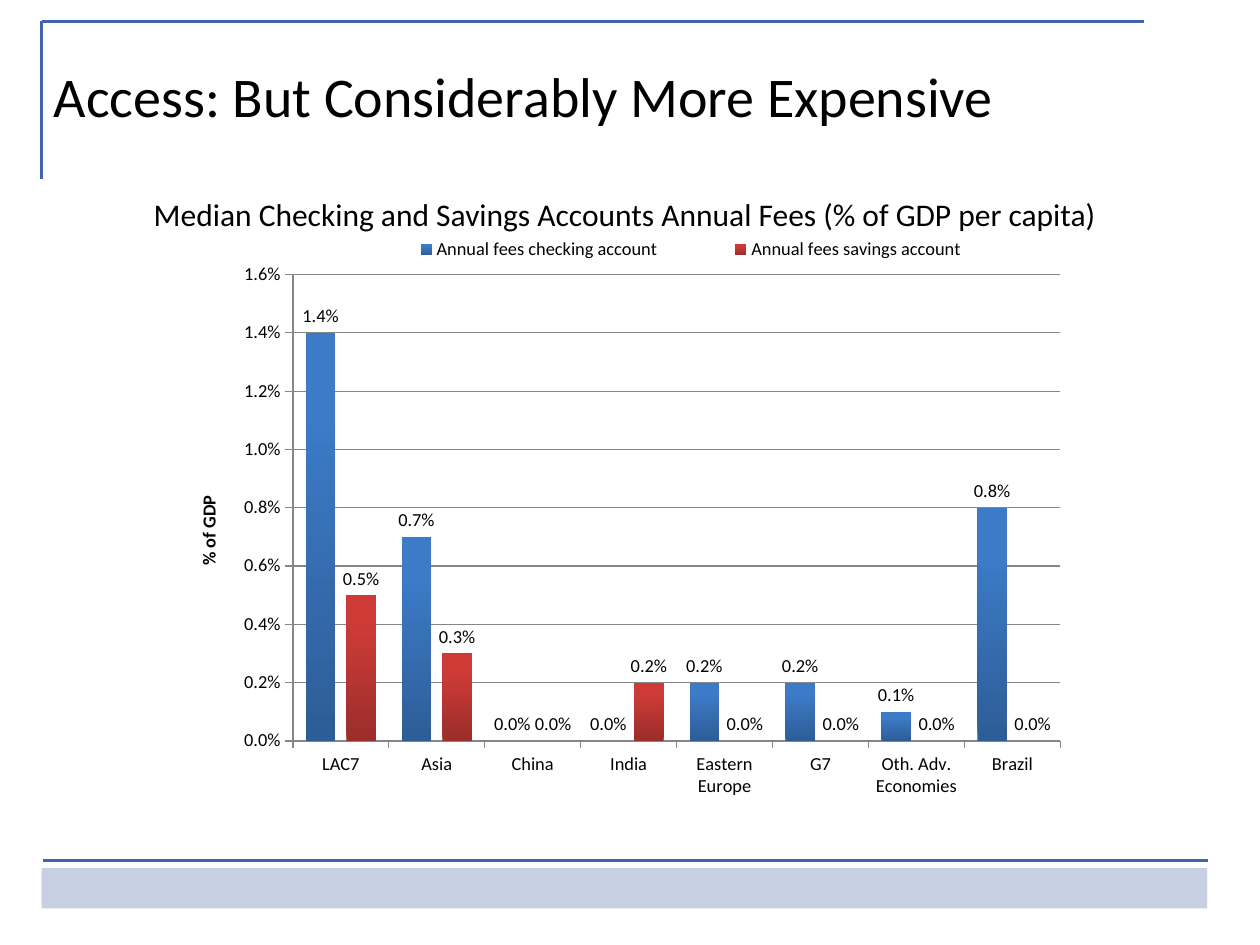
"""Build a slide comparing account fees across regions with a clustered column chart."""
import pptx
import pptx.chart.data
import pptx.dml.color
import pptx.enum.chart
import pptx.enum.shapes
import pptx.enum.text
import pptx.oxml
import pptx.oxml.ns
import pptx.util

Inches, Pt = pptx.util.Inches, pptx.util.Pt
RGBColor = pptx.dml.color.RGBColor
qn = pptx.oxml.ns.qn

RULE_BLUE = RGBColor(0x42, 0x64, 0xB0)
BAND_BLUE = RGBColor(0xC7, 0xD0, 0xE3)
BLACK = RGBColor(0, 0, 0)
GRID_GRAY = RGBColor(0x86, 0x86, 0x86)
FONT = "Calibri"
CHART_SIZE = 10.5

TITLE = "Access: But Considerably More Expensive"
SUBTITLE = "Median Checking and Savings Accounts Annual Fees (% of GDP per capita)"
AXIS_TITLE = "% of GDP"
REGIONS = ["LAC7", "Asia", "China", "India", "Eastern Europe", "G7",
           "Oth. Adv. Economies", "Brazil"]
SERIES = [
    ("Annual fees checking account",
     [0.014, 0.007, 0, 0, 0.002, 0.002, 0.001, 0.008],
     RGBColor(0x2D, 0x5D, 0x97), RGBColor(0x3C, 0x7B, 0xC7)),
    ("Annual fees savings account",
     [0.005, 0.003, 0, 0.002, 0, 0, 0, 0],
     RGBColor(0x9B, 0x2D, 0x2A), RGBColor(0xCE, 0x3B, 0x37)),
]
LEFT = 0.33
RULES = [(9.08, 0.17, LEFT, 0.17), (LEFT, 0.17, LEFT, 1.42), (9.59, 6.83, 0.34, 6.83)]
BAND_TOPS = [6.89, 6.92]
PLOT_LAYOUT = (0.117, 0.07, 0.864, 0.742)
LEGEND_LAYOUT = (0.18, 0.005, 0.77, 0.05)


def style_font(font, size, bold=False):
    font.name, font.size, font.bold = FONT, Pt(size), bold
    font.color.rgb = BLACK


def add_rule(slide, ends):
    rule = slide.shapes.add_connector(
        pptx.enum.shapes.MSO_CONNECTOR.STRAIGHT, *map(Inches, ends))
    rule.line.color.rgb = RULE_BLUE
    rule.line.width = Pt(1.5)
    properties = rule._element.spPr
    properties.append(properties.makeelement(qn("a:effectLst"), {}))


def add_band(slide, top):
    band = slide.shapes.add_shape(
        pptx.enum.shapes.MSO_SHAPE.RECTANGLE, *map(Inches, (LEFT, top, 9.25, 0.29)))
    band.shadow.inherit = False
    band.fill.solid()
    band.fill.fore_color.rgb = BAND_BLUE
    band.line.fill.background()


def add_text(slide, box, text, size, alignment, anchor):
    frame = slide.shapes.add_textbox(*map(Inches, box)).text_frame
    frame.word_wrap = True
    frame.vertical_anchor = anchor
    paragraph = frame.paragraphs[0]
    paragraph.alignment = alignment
    run = paragraph.add_run()
    run.text = text
    style_font(run.font, size)


def set_layout(parent, bounds, inner=False):
    for old in parent.findall(qn("c:layout")):
        parent.remove(old)
    target = '<c:layoutTarget val="inner"/>' if inner else ""
    modes = "".join(f'<c:{axis}Mode val="edge"/>' for axis in "xy")
    places = "".join(f'<c:{key} val="{value}"/>' for key, value in zip("xywh", bounds))
    layout = pptx.oxml.parse_xml(
        f'<c:layout xmlns:c="{pptx.oxml.ns.nsuri("c")}">'
        f"<c:manualLayout>{target}{modes}{places}</c:manualLayout></c:layout>")
    parent.insert(1 if parent.tag == qn("c:legend") else 0, layout)


def style_axis(axis):
    axis.major_tick_mark = pptx.enum.chart.XL_TICK_MARK.OUTSIDE
    axis.minor_tick_mark = pptx.enum.chart.XL_TICK_MARK.NONE
    axis.format.line.color.rgb = GRID_GRAY
    style_font(axis.tick_labels.font, CHART_SIZE)


def style_series(series, dark, light):
    series.invert_if_negative = False
    fill = series.format.fill
    fill.gradient()
    fill.gradient_angle = 90
    for stop, color, position in zip(fill.gradient_stops, (dark, light), (0, 0.8)):
        stop.color.rgb = color
        stop.position = position
    labels = series.data_labels
    labels.show_value = True
    labels.number_format, labels.number_format_is_linked = "0.0%", False
    labels.position = pptx.enum.chart.XL_LABEL_POSITION.OUTSIDE_END
    style_font(labels.font, CHART_SIZE)


def add_fee_chart(slide):
    data = pptx.chart.data.CategoryChartData(number_format="0.0%")
    data.categories = REGIONS
    for name, values, *_ in SERIES:
        data.add_series(name, values)
    chart = slide.shapes.add_chart(
        pptx.enum.chart.XL_CHART_TYPE.COLUMN_CLUSTERED,
        *map(Inches, (1.5, 1.83, 7.05, 4.99)), data).chart
    style_font(chart.font, 10)
    chart.has_title = False
    chart.has_legend = True
    chart.legend.position = pptx.enum.chart.XL_LEGEND_POSITION.TOP
    chart.legend.include_in_layout = False
    style_font(chart.legend.font, CHART_SIZE)
    set_layout(chart.legend._element, LEGEND_LAYOUT)
    set_layout(chart._chartSpace.chart.plotArea, PLOT_LAYOUT, inner=True)

    plot = chart.plots[0]
    plot.gap_width, plot.overlap, plot.vary_by_categories = 88, -38, False
    for series, (_, _, dark, light) in zip(plot.series, SERIES):
        style_series(series, dark, light)

    style_axis(chart.category_axis)
    axis = chart.value_axis
    style_axis(axis)
    axis.minimum_scale, axis.maximum_scale, axis.major_unit = 0, 0.016, 0.002
    axis.has_major_gridlines = True
    axis.major_gridlines.format.line.color.rgb = GRID_GRAY
    axis.tick_labels.number_format = "0.0%"
    axis.tick_labels.number_format_is_linked = False
    run = axis.axis_title.text_frame.paragraphs[0].add_run()
    run.text = AXIS_TITLE
    style_font(run.font, CHART_SIZE, bold=True)


def main():
    presentation = pptx.Presentation()
    presentation.slide_width, presentation.slide_height = Inches(10), Inches(7.5)
    slide = presentation.slides.add_slide(presentation.slide_layouts[6])
    for ends in RULES:
        add_rule(slide, ends)
    for top in BAND_TOPS:
        add_band(slide, top)
    align, anchor = pptx.enum.text.PP_ALIGN, pptx.enum.text.MSO_ANCHOR
    add_text(slide, (LEFT, 0.17, 9.5, 1.17), TITLE, 32, align.LEFT, anchor.MIDDLE)
    add_text(slide, (1, 1.5, 7.92, 0.4), SUBTITLE, 18, align.CENTER, anchor.TOP)
    add_fee_chart(slide)
    presentation.save("out.pptx")


if __name__ == "__main__":
    main()
